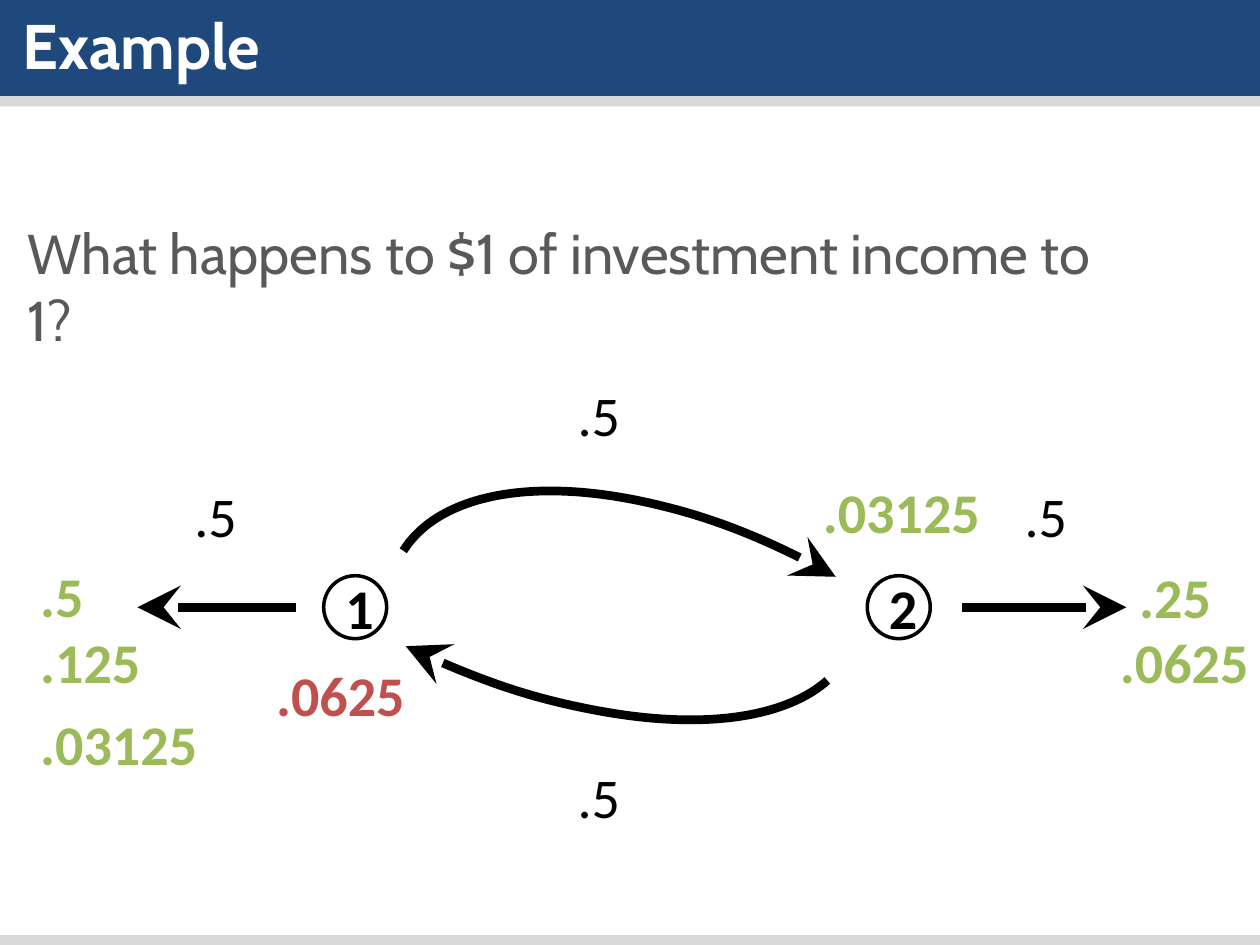
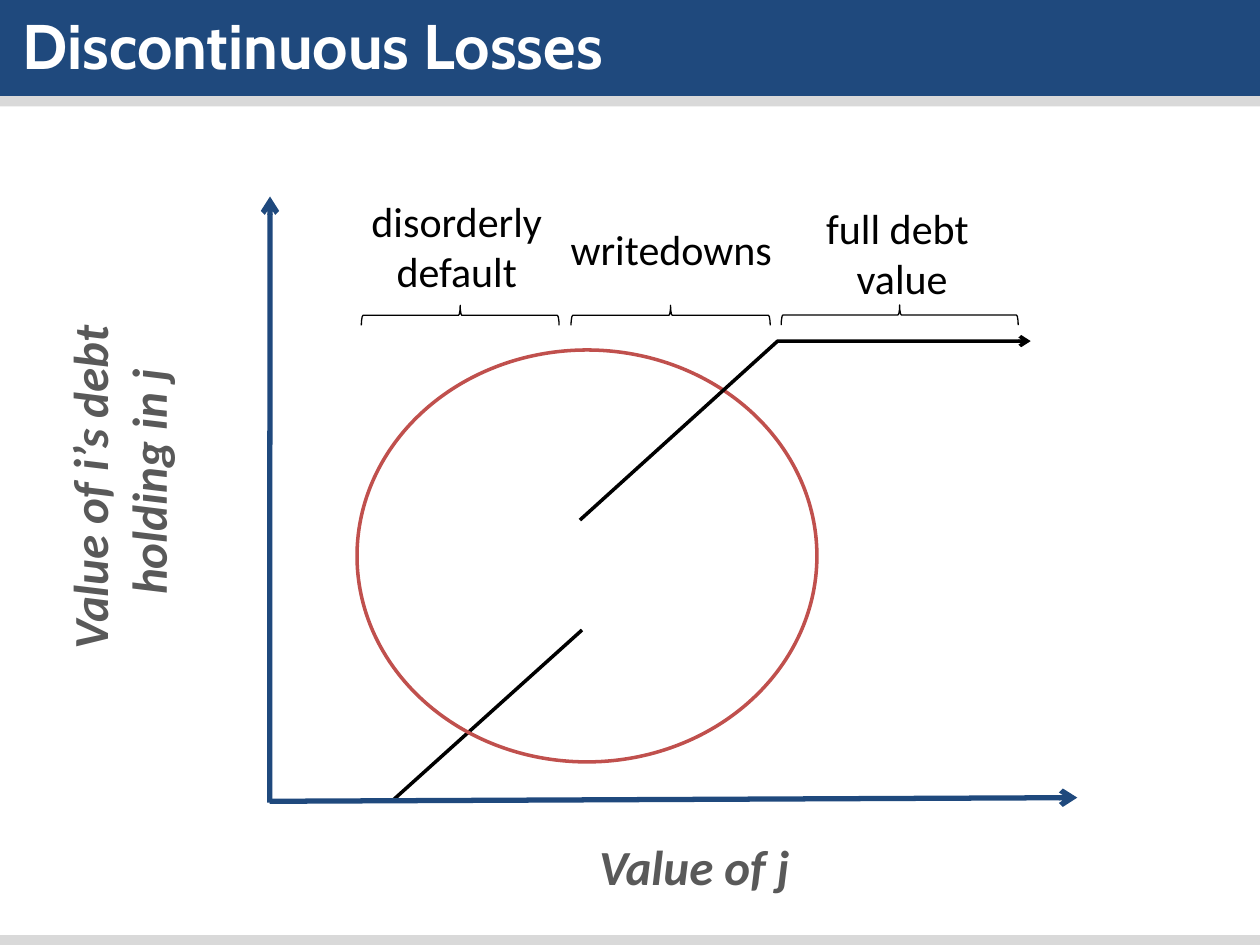
from lxml.etree import SubElement
from pptx import Presentation
from pptx.dml.color import RGBColor
from pptx.enum.shapes import MSO_CONNECTOR as Connector, MSO_SHAPE as Shape
from pptx.enum.text import MSO_ANCHOR as Anchor, MSO_AUTO_SIZE as AutoSize, PP_ALIGN as Align
from pptx.oxml.ns import qn
from pptx.util import Pt

COLORS = {
    "navy": "1F497D",
    "band": "D9D9D9",
    "white": "FFFFFF",
    "black": "000000",
    "gray": "595959",
    "green": "9BBB59",
    "red": "C0504D",
}


def style_outline(shape, color, weight, arrow_end=None, arrow_type="stealth", arrow_size="lg"):
    """Set a plain line without shadow, with an optional arrowhead."""
    shape.line.color.rgb = RGBColor.from_string(COLORS[color])
    shape.line.width = Pt(weight)
    properties = shape.element.spPr
    if arrow_end:
        SubElement(properties.find(qn("a:ln")), qn(f"a:{arrow_end}"),
                   type=arrow_type, w=arrow_size, len=arrow_size)
    if properties.find(qn("a:effectLst")) is None:
        SubElement(properties, qn("a:effectLst"))


def format_text(shape, text, size, color, font="Calibri", bold=False, italic=False,
                align=Align.LEFT):
    """Fill the shape with text in one style."""
    shape.text_frame.text = text
    shape.text_frame.word_wrap = True
    for paragraph in shape.text_frame.paragraphs:
        paragraph.alignment = align
        for run in paragraph.runs:
            run.font.name = font
            run.font.size = Pt(size)
            run.font.bold = bold
            run.font.italic = italic
            run.font.color.rgb = RGBColor.from_string(COLORS[color])


presentation = Presentation()
presentation.slide_width = Pt(720)
presentation.slide_height = Pt(540)

# Slides with their titles
slides = []
for title_text in ["Example", "Discontinuous Losses"]:
    slide = presentation.slides.add_slide(presentation.slide_layouts[5])
    title = slide.shapes.title
    title.left, title.top, title.width, title.height = Pt(5.6), Pt(0), Pt(546), Pt(55)
    format_text(title, title_text, 36, "white", font="Cabin", bold=True)
    title.text_frame.auto_size = AutoSize.NONE
    title.text_frame.vertical_anchor = Anchor.TOP
    slides.append(slide)
example, losses = slides

# Shared bands, placed at the back of the master
master_tree = presentation.slide_master.element.cSld.spTree
bands = [(0, 55, "navy"), (55, 5.8, "band"), (534.4, 5.6, "band")]
for index, (top, height, color) in enumerate(bands):
    band = example.shapes.add_shape(Shape.RECTANGLE, Pt(0), Pt(top), Pt(720), Pt(height))
    band.shadow.inherit = False
    band.fill.solid()
    band.fill.fore_color.rgb = RGBColor.from_string(COLORS[color])
    band.line.fill.background()
    band.element.nvSpPr.cNvPr.set("id", str(100 + index))
    master_tree.insert(2 + index, band.element)

# Example: numbered nodes
for number, left in [("2", 495.6), ("1", 185)]:
    node = example.shapes.add_shape(Shape.OVAL, Pt(left), Pt(329), Pt(36), Pt(36))
    node.fill.background()
    style_outline(node, "black", 2)
    format_text(node, number, 32, "black", bold=True, align=Align.CENTER)

# Example: curved arrows between the nodes
curves = [
    (172.8, 45.4, 213.8, 456.5, 115.5, 215.35, 50.81),
    (309.6, 205.2, 214.6, 427, 298.1, 212.3, 53.38),
]
for left, top, width, height, rotation, start, end in curves:
    curve = example.shapes.add_shape(Shape.ARC, Pt(left), Pt(top), Pt(width), Pt(height))
    curve.adjustments[0], curve.adjustments[1] = start, end
    curve.rotation = rotation
    curve.element.spPr.find(qn("a:xfrm")).set("flipV", "1")
    curve.fill.background()
    style_outline(curve, "black", 5, "headEnd")

# Example: arrows leaving the nodes
for start, end in [(549.6, 643.7), (169.2, 78.5)]:
    arrow = example.shapes.add_connector(
        Connector.STRAIGHT, Pt(start), Pt(347), Pt(end), Pt(347))
    style_outline(arrow, "black", 5, "tailEnd")

# Example: question
question = example.shapes.add_textbox(Pt(8.6), Pt(121.3), Pt(640), Pt(84))
format_text(question, "What happens to $1 of investment income to 1?", 32, "gray", font="Cabin")

# Example: shares in black, payments in colour
amounts = [
    (".5", 111, 275, "black"),
    (".5", 330, 217.2, "black"),
    (".5", 330, 435.6, "black"),
    (".5", 585.5, 275, "black"),
    (".5", 23, 321, "green"),
    (".125", 23, 358.6, "green"),
    (".03125", 23, 405.4, "green"),
    (".25", 651, 321.6, "green"),
    (".0625", 640, 358.6, "green"),
    (".03125", 470.2, 272.9, "green"),
    (".0625", 157.8, 377.3, "red"),
]
for text, left, top, color in amounts:
    amount = example.shapes.add_textbox(
        Pt(left), Pt(top), Pt(10 + 17 * (len(text) - 1)), Pt(40))
    frame = amount.text_frame
    frame.margin_left = frame.margin_right = frame.margin_top = frame.margin_bottom = Pt(0)
    format_text(amount, text, 32, color, bold=color != "black")

# Losses: axes and the lower segment of the value line
segments = [
    (224.6, 457.2, 332.6, 360, "black", 2, None),
    (154.1, 458.6, 154.3, 112.3, "navy", 3, "tailEnd"),
    (154.1, 457.9, 615.6, 455.8, "navy", 3, "tailEnd"),
]
for x1, y1, x2, y2, color, weight, arrow_end in segments:
    segment = losses.shapes.add_connector(Connector.STRAIGHT, Pt(x1), Pt(y1), Pt(x2), Pt(y2))
    style_outline(segment, color, weight, arrow_end, "arrow", "med")

# Losses: circle around the jump
highlight = losses.shapes.add_shape(Shape.OVAL, Pt(204), Pt(200), Pt(262.8), Pt(235.4))
highlight.fill.background()
style_outline(highlight, "red", 2)

# Losses: upper segment of the value line
builder = losses.shapes.build_freeform(Pt(331.4), Pt(297.2))
builder.add_line_segments([(Pt(444.4), Pt(194.9)), (Pt(589), Pt(194.9))], close=False)
value_line = builder.convert_to_shape()
value_line.fill.background()
style_outline(value_line, "black", 2, "tailEnd", "arrow", "med")

# Losses: braces, each turned by its camera to point up at its label
brace_width = 11.5
for center_x, center_y, span in [(263, 180.2, 113), (383.2, 180.2, 113.8), (514.1, 180, 135.4)]:
    brace = losses.shapes.add_shape(
        Shape.RIGHT_BRACE, Pt(center_x - brace_width / 2), Pt(center_y - span / 2),
        Pt(brace_width), Pt(span))
    brace.fill.background()
    style_outline(brace, "black", 0.75)
    scene = SubElement(brace.element.spPr, qn("a:scene3d"))
    camera = SubElement(scene, qn("a:camera"), prst="orthographicFront")
    SubElement(camera, qn("a:rot"), lat="0", lon="0", rev="5400000")
    SubElement(scene, qn("a:lightRig"), rig="threePt", dir="t")

# Losses: range labels
for text, left, top, height in [("disorderly default", 180, 108, 65.5),
                                ("writedowns", 302.6, 124, 36),
                                ("full debt \vvalue", 434.5, 112.1, 65.5)]:
    label = losses.shapes.add_textbox(Pt(left), Pt(top), Pt(162), Pt(height))
    format_text(label, text, 24, "black", align=Align.CENTER)

# Losses: axis titles
for text, left, top, width, height, direction in [
        ("Value of i’s debt \nholding in j", 30.2, 160.6, 104.4, 229.7, "vert270"),
        ("Value of j", 334.8, 474.7, 123.8, 41, "horz")]:
    axis_title = losses.shapes.add_textbox(Pt(left), Pt(top), Pt(width), Pt(height))
    format_text(axis_title, text, 28, "gray", bold=True, italic=True, align=Align.CENTER)
    axis_title.element.txBody.bodyPr.set("vert", direction)

presentation.save("out.pptx")
